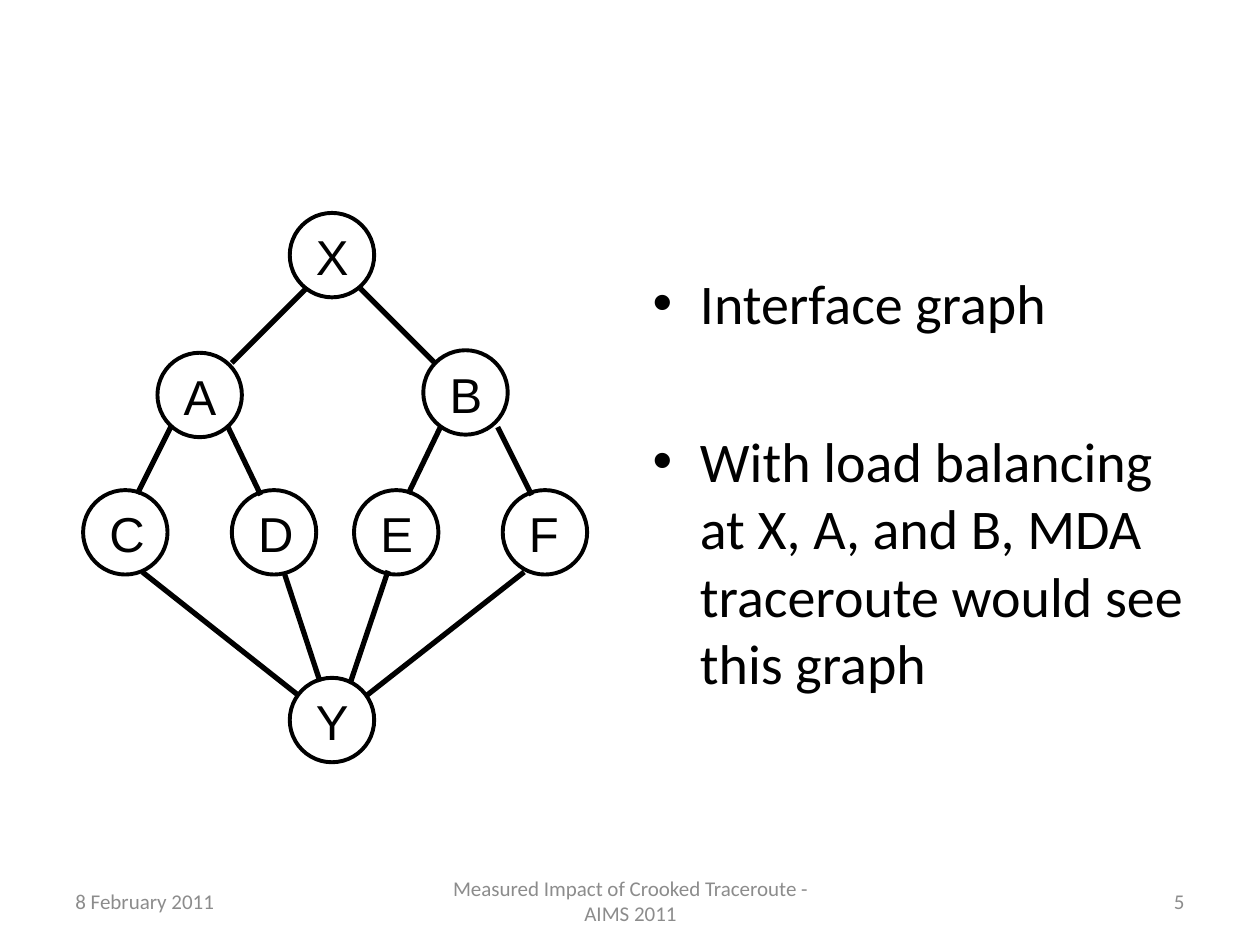
from pptx import Presentation, util as u
from pptx.dml.color import RGBColor
from pptx.enum import shapes, text
from pptx.oxml.ns import qn
from lxml import etree

CELL = u.Inches(0.1)
COLUMNS, ROWS = 100, 75
BLACK, GREY = "000000", "8C8C8C"
NODE_SIZE = 6.7
LABEL_WIDTHS = {"C": 4.8, "D": 4.8, "F": 4.4}
NODES = {
    "X": (23, 16.9), "A": (12.5, 28), "B": (33.6, 27.8),
    "C": (6.6, 38.9), "D": (18.4, 38.9), "E": (28.1, 38.9),
    "F": (39.9, 38.9), "Y": (23, 53.8),
}
LINKS = [
    (24.3, 22.9, 18.4, 28.8), (34.5, 28.8, 28.6, 22.9),
    (13.6, 33.8, 10.9, 39.2), (18.1, 33.9, 20.7, 39.3),
    (35, 33.8, 32.4, 39.2), (39.5, 33.9, 42.2, 39.3),
    (11.3, 45.4, 23.7, 55.2), (22.6, 45.6, 25.4, 54.1),
    (30.8, 45.3, 27.8, 54.2), (41.6, 45.4, 29.1, 55.2),
]
POINTS = [
    "Interface graph",
    "With load balancing at X, A, and B, MDA traceroute would see this graph",
]
FOOTERS = [
    (5, 23.3, "8 February 2011", text.PP_ALIGN.LEFT),
    (34.2, 31.7, "Measured Impact of Crooked Traceroute - AIMS 2011", text.PP_ALIGN.CENTER),
    (71.7, 23.3, "5", text.PP_ALIGN.RIGHT),
]


def cells(*counts):
    return [round(count * CELL) for count in counts]


def color(value):
    return RGBColor.from_string(value)


def write(para, words, font="Calibri", size=12, fill=BLACK, align=None):
    para.alignment = align
    span = para.add_run()
    span.text = words
    span.font.name = font
    span.font.size = u.Pt(size)
    span.font.color.rgb = color(fill)


def outline(item, width):
    item.line.color.rgb = color(BLACK)
    item.line.width = u.Pt(width)


def add_link(page, ends):
    link = page.shapes.add_connector(shapes.MSO_CONNECTOR.STRAIGHT, *cells(*ends))
    outline(link, 3)
    etree.SubElement(link._element.spPr, qn("a:effectLst"))


def add_node(page, name, left, top):
    group = page.shapes.add_group_shape()
    circle = group.shapes.add_shape(
        shapes.MSO_SHAPE.OVAL, *cells(left, top, NODE_SIZE, NODE_SIZE))
    circle.shadow.inherit = False
    circle.fill.background()
    outline(circle, 2.25)
    box = group.shapes.add_textbox(
        *cells(left + 1.1, top + 0.6, LABEL_WIDTHS.get(name, 4.6), 5.7))
    box.text_frame.word_wrap = False
    box.text_frame.auto_size = text.MSO_AUTO_SIZE.SHAPE_TO_FIT_TEXT
    write(box.text_frame.paragraphs[0], name, font="Arial", size=28)


def add_points(page):
    body = page.placeholders[1]
    body.left, body.top, body.width, body.height = cells(50.8, 20.8, 44.2, 43.3)
    frame = body.text_frame
    for index, words in enumerate(POINTS):
        para = frame.add_paragraph() if index else frame.paragraphs[0]
        write(para, words, size=32)
        if index:
            para.space_before = u.Pt(52)


def add_footer(page, left, width, words, align):
    box = page.shapes.add_textbox(*cells(left, 69.5, width, 4))
    box.text_frame.word_wrap = True
    box.text_frame.vertical_anchor = text.MSO_ANCHOR.MIDDLE
    write(box.text_frame.paragraphs[0], words, fill=GREY, align=align)


def main():
    deck = Presentation()
    deck.slide_width, deck.slide_height = cells(COLUMNS, ROWS)
    page = deck.slides.add_slide(deck.slide_layouts[1])
    title = page.shapes.title._element
    title.getparent().remove(title)
    for name, corner in NODES.items():
        add_node(page, name, *corner)
    for ends in LINKS:
        add_link(page, ends)
    add_points(page)
    for footer in FOOTERS:
        add_footer(page, *footer)
    deck.save("out.pptx")


if __name__ == "__main__":
    main()
